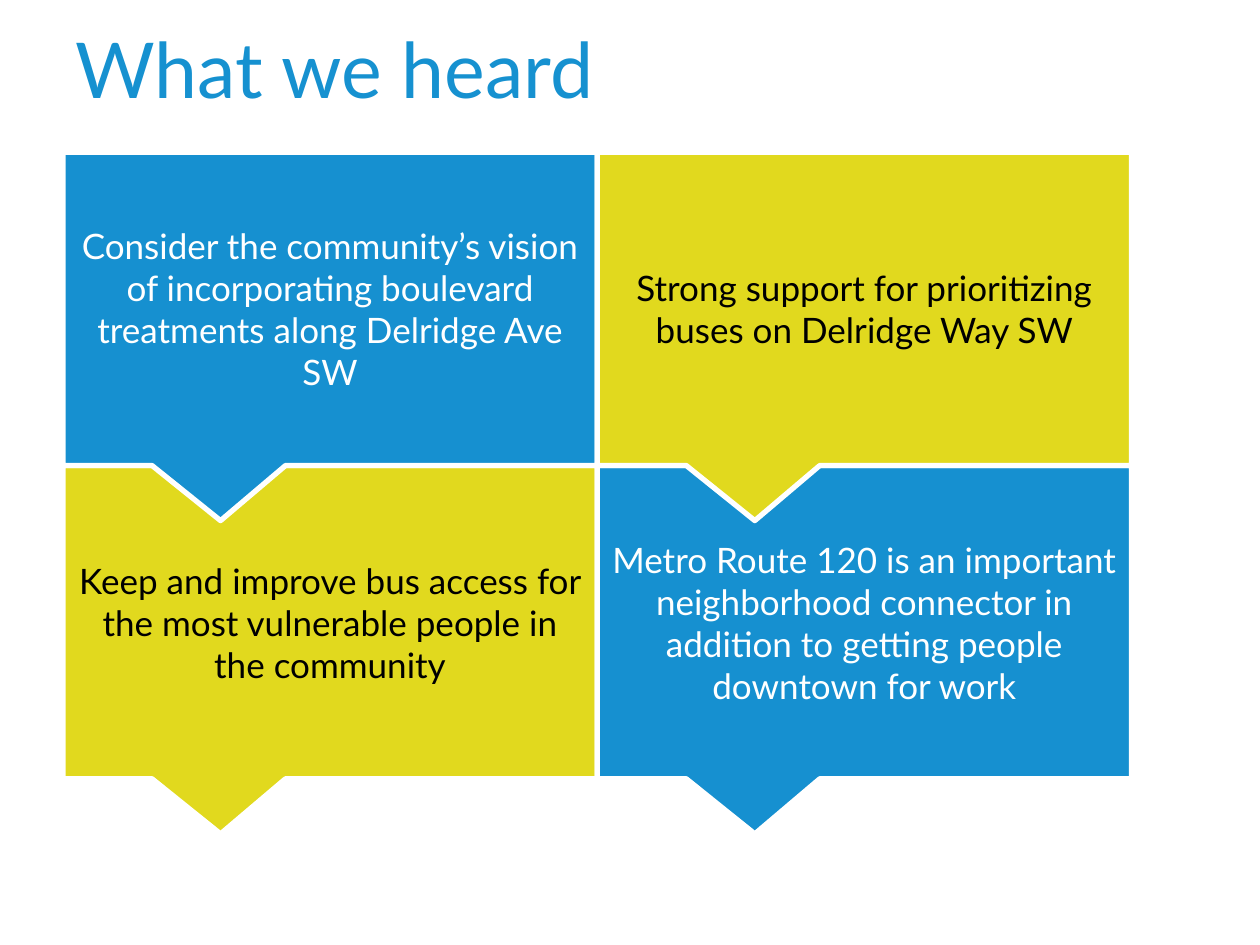
import pptx
import pptx.util
import pptx.dml.color
import pptx.enum.shapes
import pptx.enum.text

Pt = pptx.util.Pt
ALIGN = pptx.enum.text.PP_ALIGN
ANCHOR = pptx.enum.text.MSO_ANCHOR
CALLOUT = pptx.enum.shapes.MSO_SHAPE.RECTANGULAR_CALLOUT

FONT = "Lato"
BLUE, LIME, WHITE, BLACK = "1690D0", "E1D91E", "FFFFFF", "000000"

# Each entry: text, fill, text colour
ROWS = [
    [("Consider the community’s vision of incorporating boulevard "
      "treatments along Delridge Ave SW", BLUE, WHITE),
     ("Strong support for prioritizing buses on Delridge Way SW",
      LIME, BLACK)],
    [("Keep and improve bus access for the most vulnerable people "
      "in the community", LIME, BLACK),
     ("Metro Route 120 is an important neighborhood connector in "
      "addition to getting people downtown for work", BLUE, WHITE)],
]


def paint(target, color):
    """Give a fill a solid colour."""
    target.solid()
    target.fore_color.rgb = pptx.dml.color.RGBColor.from_string(color)


def write(shape, text, size, color, align, anchor):
    frame = shape.text_frame
    frame.word_wrap = True
    frame.auto_size = pptx.enum.text.MSO_AUTO_SIZE.NONE
    frame.vertical_anchor = anchor
    para = frame.paragraphs[0]
    para.alignment = align
    run = para.add_run()
    run.text = text
    run.font.name = FONT
    run.font.size = Pt(size)
    paint(run.font.fill, color)


def place_title(slide, left, top, width, height):
    title = slide.shapes.title
    title.left, title.top = Pt(left), Pt(top)
    title.width, title.height = Pt(width), Pt(height)
    paint(title.fill, WHITE)
    write(title, "What we heard", 44, "1691D0", ALIGN.LEFT, ANCHOR.TOP)


def add_callout(slide, left, top, width, height, text, fill, color):
    box = slide.shapes.add_shape(
        CALLOUT, Pt(left), Pt(top), Pt(width), Pt(height))
    box.shadow.inherit = False
    box.adjustments[0] = -0.205
    box.adjustments[1] = 0.676
    paint(box.fill, fill)
    paint(box.line.fill, WHITE)
    box.line.width = Pt(3)
    write(box, text, 20, color, ALIGN.CENTER, ANCHOR.MIDDLE)


def add_grid(slide, left, top, width, height):
    """Fill the box with callouts, lowest row first so tails overlap it."""
    wide, high = width / 2, height / 2
    for row, cells in reversed(list(enumerate(ROWS))):
        for col, cell in enumerate(cells):
            add_callout(slide, left + col * wide, top + row * high,
                        wide, high, *cell)


def main():
    deck = pptx.Presentation()
    deck.slide_width, deck.slide_height = Pt(720), Pt(540)
    slide = deck.slides.add_slide(deck.slide_layouts[5])
    paint(slide.background.fill, WHITE)
    place_title(slide, 36, 8.6, 610.6, 79)
    add_grid(slide, 36, 87, 610.6, 358)
    deck.save("out.pptx")


if __name__ == "__main__":
    main()
